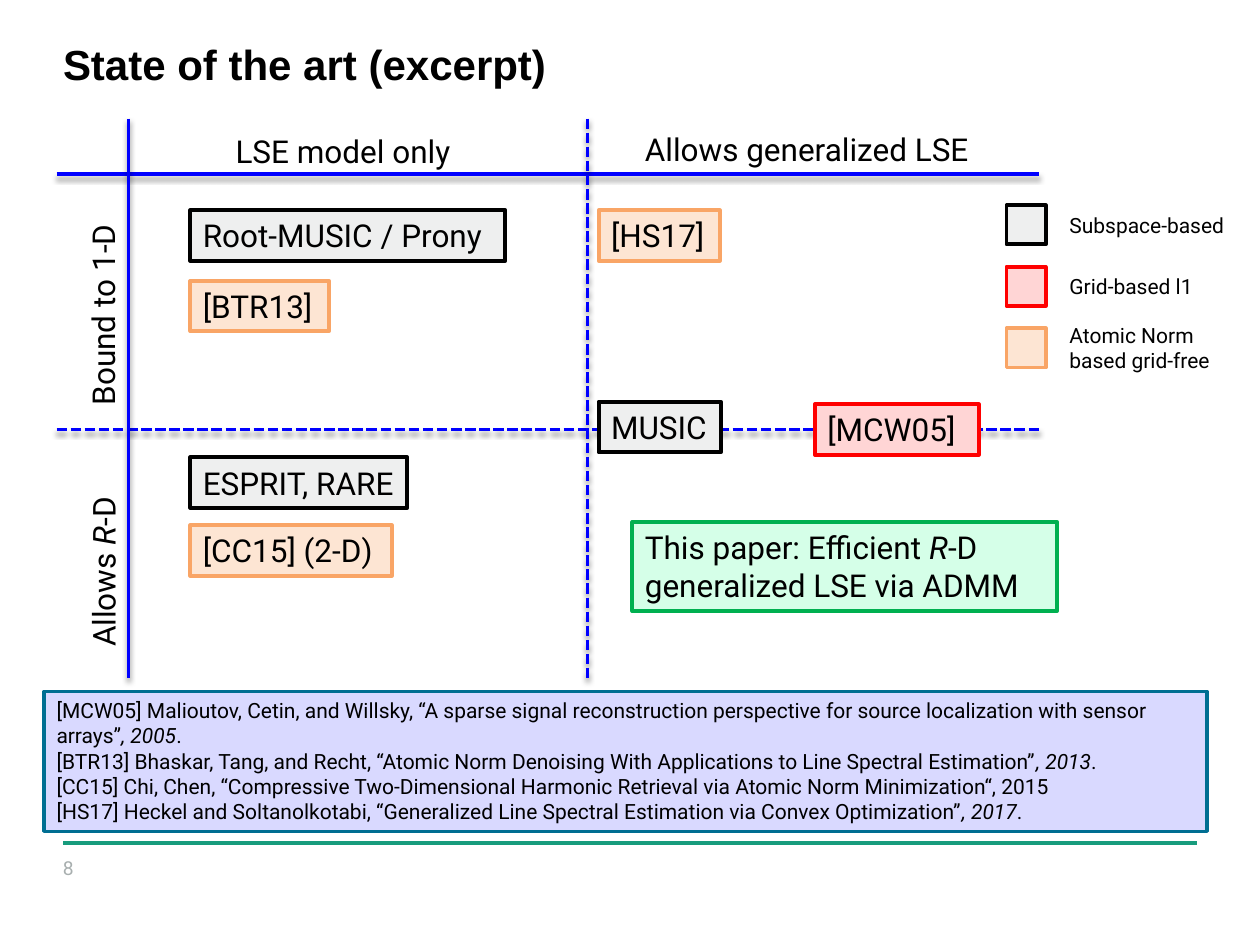
from dataclasses import dataclass

from lxml.etree import SubElement
from pptx import Presentation
from pptx.dml.color import RGBColor
from pptx.enum.dml import MSO_LINE
from pptx.enum.shapes import MSO_CONNECTOR, MSO_SHAPE
from pptx.enum.text import MSO_ANCHOR, MSO_AUTO_SIZE as AutoSize, PP_ALIGN
from pptx.oxml.ns import qn
from pptx.util import Cm, Pt


@dataclass(frozen=True)
class Theme:
    heading_font: str = "Arial"
    body_font: str = "Roboto"
    title_size: float = 24
    label_size: float = 18
    small_size: float = 12
    number_size: float = 11
    box_line: float = 2.25
    axis_line: float = 2
    footer_line: float = 2.5
    text: str = "000000"
    muted: str = "A8AFAF"
    axis: str = "0000FF"
    footer: str = "179C7D"
    subspace: tuple = ("EEEFEF", "000000")
    grid: tuple = ("FFD5D5", "FF0000")
    atomic: tuple = ("FDE5D3", "F9A566")
    paper: tuple = ("D5FFE8", "00B050")
    references: tuple = ("D9D9FF", "006E92")


def write_text(frame, text, *, font, size, color, bold=False):
    for row, content in enumerate(text if isinstance(text, list) else [text]):
        para = frame.add_paragraph() if row else frame.paragraphs[0]
        para.alignment = PP_ALIGN.LEFT
        for index, part in enumerate(content.split("*")):
            for number, line in enumerate(part.split("\n")):
                if number:
                    para.add_line_break()
                if line:
                    span = para.add_run()
                    span.text = line
                    span.font.name = font
                    span.font.size = Pt(size)
                    span.font.color.rgb = RGBColor.from_string(color)
                    span.font.bold = bold
                    span.font.italic = index % 2 == 1


class PageBuilder:
    def __init__(self, page, theme):
        self.page = page
        self.theme = theme

    def title(self, text, left, top, width, height):
        box = self.page.shapes.title
        box.left, box.top, box.width, box.height = map(Cm, (left, top, width, height))
        self.margins(box.text_frame, 0)
        box.text_frame.vertical_anchor = MSO_ANCHOR.MIDDLE
        box.text_frame.auto_size = AutoSize.NONE
        write_text(box.text_frame, text, font=self.theme.heading_font,
                   size=self.theme.title_size, color=self.theme.text, bold=True)

    def margins(self, frame, size):
        frame.margin_left = frame.margin_right = Cm(size)
        frame.margin_top = frame.margin_bottom = Cm(size)

    def line(self, start, end, color, width, dashed=False, shadow=False):
        line = self.page.shapes.add_connector(
            MSO_CONNECTOR.STRAIGHT, *map(Cm, (*start, *end)))
        line.line.color.rgb = RGBColor.from_string(color)
        line.line.width = Pt(width)
        if dashed:
            line.line.dash_style = MSO_LINE.SQUARE_DOT
        effects = SubElement(line._element.spPr, qn("a:effectLst"))
        if shadow:
            outer = SubElement(effects, qn("a:outerShdw"), blurRad=str(Pt(3.1)),
                               dist=str(Pt(1.6)), dir="5400000", rotWithShape="0")
            shade = SubElement(outer, qn("a:srgbClr"), val="000000")
            SubElement(shade, qn("a:alpha"), val="38000")

    def label(self, text, left, top, width, height=1.02, size=None,
              color=None, rotation=0, margin=None, anchor=MSO_ANCHOR.TOP):
        box = self.page.shapes.add_textbox(*map(Cm, (left, top, width, height)))
        box.rotation = rotation
        frame = box.text_frame
        frame.word_wrap = False
        frame.vertical_anchor = anchor
        if margin is not None:
            self.margins(frame, margin)
        write_text(frame, text, font=self.theme.body_font,
                   size=size or self.theme.label_size, color=color or self.theme.text)
        frame.auto_size = AutoSize.SHAPE_TO_FIT_TEXT

    def panel(self, text, left, top, width, height, colors, size=None,
              line_width=None, wrap=False):
        fill, outline = colors
        box = self.page.shapes.add_shape(
            MSO_SHAPE.RECTANGLE, *map(Cm, (left, top, width, height)))
        box.shadow.inherit = False
        box.fill.solid()
        box.fill.fore_color.rgb = RGBColor.from_string(fill)
        box.line.color.rgb = RGBColor.from_string(outline)
        box.line.width = Pt(line_width or self.theme.box_line)
        if text:
            frame = box.text_frame
            frame.word_wrap = wrap
            frame.vertical_anchor = MSO_ANCHOR.TOP
            write_text(frame, text, font=self.theme.body_font,
                       size=size or self.theme.label_size, color=self.theme.text)
            frame.auto_size = AutoSize.SHAPE_TO_FIT_TEXT

    def legend_entry(self, text, left, top, width, height, colors):
        side = 0.79
        self.panel(None, left, top, side, side, colors)
        self.label(text, left + 1.02, top + (side - height) / 2, width, height,
                   size=self.theme.small_size, anchor=MSO_ANCHOR.MIDDLE)


def main():
    deck = Presentation()
    deck.slide_width, deck.slide_height = Cm(25.4), Cm(19.05)
    theme = Theme()
    builder = PageBuilder(deck.slides.add_slide(deck.slide_layouts[5]), theme)

    builder.line((1.27, 16.99), (24.13, 16.99), theme.footer, theme.footer_line)
    builder.label("8", 1.27, 17.27, 2.06, 0.81, size=theme.number_size,
                  color=theme.muted, margin=0)
    builder.title("State of the art (excerpt)", 1.27, 0.69, 22.83, 1.19)

    for y, dashed in ((3.51, False), (8.66, True)):
        builder.line((1.14, y), (20.94, y), theme.axis, theme.axis_line, dashed, True)
    for x, dashed in ((2.59, False), (11.84, True)):
        builder.line((x, 2.39), (x, 13.67), theme.axis, theme.axis_line, dashed, True)

    builder.label("Bound to 1-D", -0.18, 5.66, 4.5, rotation=270)
    builder.label("Allows *R*-D", 0.2, 10.9, 3.76, rotation=270)
    builder.label("LSE model only", 4.5, 2.54, 5.03)
    builder.label("Allows generalized LSE", 12.75, 2.49, 7.39)

    left_column, right_column = 3.84, 12.07
    for text, left, top, width, colors in (
        ("Root-MUSIC / Prony", left_column, 4.24, 6.35, theme.subspace),
        ("[BTR13]", left_column, 5.66, 2.79, theme.atomic),
        ("ESPRIT, RARE", left_column, 9.22, 4.37, theme.subspace),
        ("[CC15] (2-D)", left_column, 10.59, 4.06, theme.atomic),
        ("[HS17]", right_column, 4.24, 2.44, theme.atomic),
        ("MUSIC", right_column, 8.1, 2.46, theme.subspace),
        ("[MCW05]", 16.43, 8.15, 3.3, theme.grid),
    ):
        builder.panel(text, left, top, width, 1.02, colors)
    builder.panel("This paper: Efficient *R*-D \ngeneralized LSE via ADMM",
                  12.75, 10.52, 8.56, 1.8, theme.paper)

    for row, (text, width, height, colors) in enumerate((
        ("Subspace-based", 3.66, 0.76, theme.subspace),
        ("Grid-based l1", 3.15, 0.76, theme.grid),
        ("Atomic Norm \nbased grid-free", 3.56, 1.27, theme.atomic),
    )):
        builder.legend_entry(text, 20.29, 4.14 + row * 1.24, width, height, colors)

    builder.panel([
        "[MCW05] Malioutov, Cetin, and Willsky, “A sparse signal reconstruction "
        "perspective for source localization with sensor arrays”*, 2005*.",
        "[BTR13] Bhaskar, Tang, and Recht, “Atomic Norm Denoising With "
        "Applications to Line Spectral Estimation”*, 2013*.",
        "[CC15] Chi, Chen, “Compressive Two-Dimensional Harmonic Retrieval via "
        "Atomic Norm Minimization“, 2015",
        "[HS17] Heckel and Soltanolkotabi, “Generalized Line Spectral Estimation "
        "via Convex Optimization”*, 2017*.",
    ], 0.89, 13.94, 23.44, 2.82, theme.references, size=theme.small_size,
        line_width=theme.axis_line, wrap=True)

    deck.save("out.pptx")


if __name__ == "__main__":
    main()
